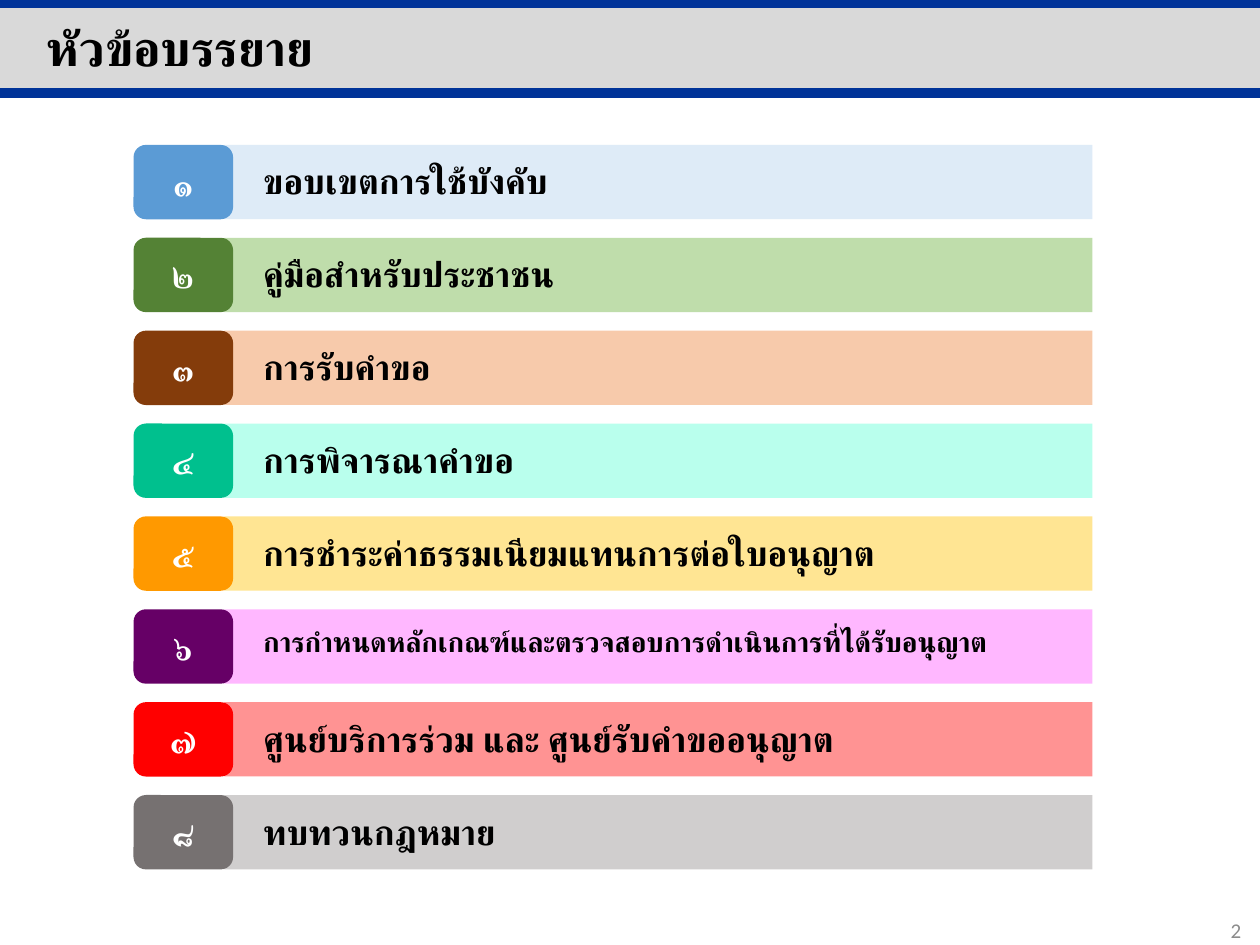
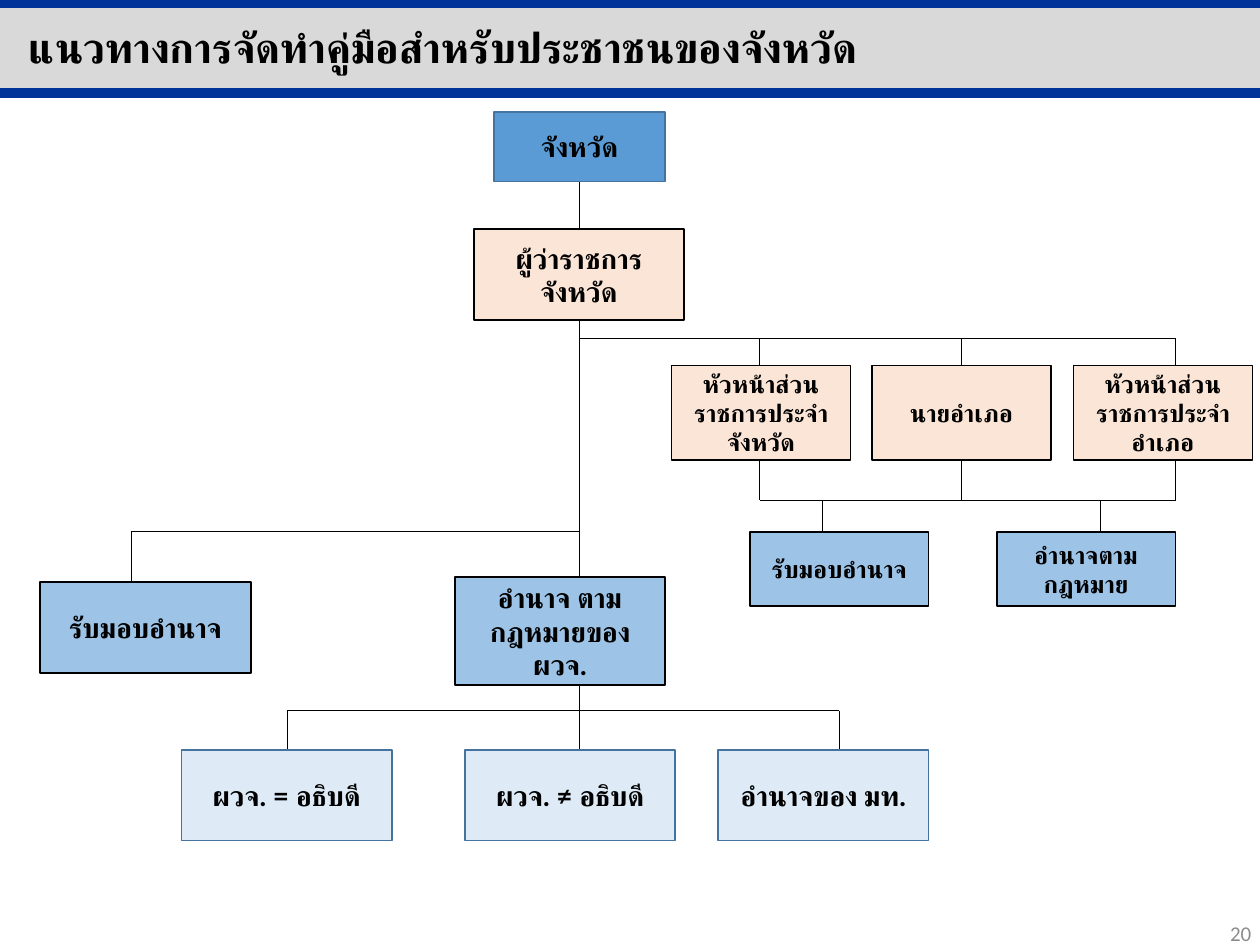
from lxml import etree
from pptx import Presentation
from pptx.dml.color import RGBColor
from pptx.enum.lang import MSO_LANGUAGE_ID as LANG
from pptx.enum.shapes import MSO_CONNECTOR as CONNECTOR, MSO_SHAPE as SHAPE
from pptx.enum.text import MSO_ANCHOR as ANCHOR, MSO_AUTO_SIZE as AUTO_SIZE, PP_ALIGN as ALIGN
from pptx.oxml.ns import qn
from pptx.util import Inches, Pt

COLORS = {
    "band": "D9D9D9", "rule": "003399", "text": "000000", "white": "FFFFFF",
    "page": "8C8C8C", "edge": "43739E",
    "province": "5B9BD5", "officer": "FBE5D6", "power": "9DC3E6", "case": "DEEBF7",
}
THAI_FONT, PAGE_FONT = "Lato", "Calibri"

# number, topic, text size, badge colour, bar colour
TOPICS = [
    ("๑", "ขอบเขตการใช้บังคับ", 20, "5B9BD5", "DEEBF7"),
    ("๒", "คู่มือสำหรับประชาชน", 20, "548235", "BFDDAB"),
    ("๓", "การรับคำขอ", 20, "843C0B", "F7CAAB"),
    ("๔", "การพิจารณาคำขอ", 20, "00C08E", "B9FFED"),
    ("๕", "การชำระค่าธรรมเนียมแทนการต่อใบอนุญาต", 20, "FF9900", "FFE593"),
    ("๖", "การกำหนดหลักเกณฑ์และตรวจสอบการดำเนินการที่ได้รับอนุญาต", 16, "660066", "FFB7FF"),
    ("๗", "ศูนย์บริการร่วม และ ศูนย์รับคำขออนุญาต", 20, "FF0000", "FF9393"),
    ("๘", "ทบทวนกฎหมาย", 20, "767171", "D0CECE"),
]
FIRST_TOP, LAST_TOP, BAR_HEIGHT = 1.15, 6.31, 0.59

# Each tier: colour, edge, text size, top, width, height, [(left, label), ...]
TIERS = [
    ("province", "edge", 16, 0.89, 1.36, 0.55, [(3.92, "จังหวัด")]),
    ("officer", "text", 16, 1.82, 1.67, 0.72, [(3.76, "ผู้ว่าราชการจังหวัด")]),
    ("officer", "text", 14, 2.9, 1.42, 0.75, [
        (5.33, "หัวหน้าส่วนราชการประจำจังหวัด"),
        (6.92, "นายอำเภอ"),
        (8.52, "หัวหน้าส่วนราชการประจำอำเภอ")]),
    ("power", "text", 14, 4.22, 1.42, 0.59, [
        (5.95, "รับมอบอำนาจ"), (7.91, "อำนาจตามกฎหมาย")]),
    ("power", "text", 16, 4.62, 1.67, 0.72, [(0.32, "รับมอบอำนาจ")]),
    ("power", "text", 16, 4.58, 1.67, 0.86, [(3.61, "อำนาจ ตามกฎหมายของ ผวจ.")]),
    ("case", "edge", 16, 5.95, 1.67, 0.72, [
        (1.44, "ผวจ. = อธิบดี"), (3.69, "ผวจ. ≠ อธิบดี"), (5.7, "อำนาจของ มท.")]),
]
TRUNK = 4.6
# Each branch: level, left end, right end, [(x, top, bottom) of its uprights]
BRANCHES = [
    (2.69, TRUNK, 9.33, [(x, 2.69, 3.97) for x in (6.03, 7.63, 9.33)]),
    (3.97, 6.03, 9.33, [(x, 3.97, 4.52) for x in (6.53, 8.73)]),
    (4.22, 1.04, TRUNK, [(1.04, 4.22, 4.62)]),
    (5.64, 2.28, 6.66, [(x, 5.64, 6.07) for x in (2.28, 6.66)]),
]


def rgb(color):
    return RGBColor.from_string(COLORS.get(color, color))


def write(frame, text, size, color="text", font=THAI_FONT, bold=True,
          align=ALIGN.LEFT, anchor=ANCHOR.MIDDLE):
    frame.word_wrap = True
    frame.auto_size = AUTO_SIZE.NONE
    frame.vertical_anchor = anchor
    paragraph = frame.paragraphs[0]
    paragraph.alignment = align
    run = paragraph.add_run()
    run.text = text
    run.font.name, run.font.size, run.font.bold = font, Pt(size), bold
    run.font.color.rgb = rgb(color)
    run.font.language_id = LANG.THAI
    # Thai glyphs take the complex-script typeface
    latin = run.font._element.find(qn("a:latin"))
    complex_script = etree.Element(qn("a:cs"), typeface=font)
    latin.addnext(complex_script)


def add_block(slide, left, top, width, height, fill, edge=None, kind=SHAPE.RECTANGLE):
    block = slide.shapes.add_shape(kind, *map(Inches, (left, top, width, height)))
    block.shadow.inherit = False
    block.fill.solid()
    block.fill.fore_color.rgb = rgb(fill)
    if edge:
        block.line.color.rgb = rgb(edge)
        block.line.width = Pt(1)
    else:
        block.line.fill.background()
    return block


def add_label(slide, left, top, width, height, text, size, **style):
    label = slide.shapes.add_textbox(*map(Inches, (left, top, width, height)))
    write(label.text_frame, text, size, **style)


def add_line(slide, x1, y1, x2, y2, color="text", width=0.5):
    line = slide.shapes.add_connector(CONNECTOR.STRAIGHT, *map(Inches, (x1, y1, x2, y2)))
    line.line.color.rgb = rgb(color)
    line.line.width = Pt(width)
    etree.SubElement(line._element.spPr, qn("a:effectLst"))
    return line


def put_header_on_layout(slide):
    """Draw the title band and its rules, then move them to the slide's layout."""
    parts = [add_block(slide, 0, 0.05, 10, 0.68, "band")]
    parts += [add_line(slide, 0, y, 10, y, "rule", 6) for y in (0.74, 0.02)]
    layout_tree = slide.slide_layout.shapes.element
    for position, part in enumerate(parts, start=2):
        layout_tree.insert(position, part.element)


def add_titled_slide(prs, title, size, place, page, page_place):
    slide = prs.slides.add_slide(prs.slide_layouts[5])
    heading = slide.shapes.title
    heading.left, heading.top, heading.width, heading.height = map(Inches, place)
    write(heading.text_frame, title, size)
    add_label(slide, *page_place, 2.25, 0.4, page, 12, color="page",
              font=PAGE_FONT, bold=False, align=ALIGN.RIGHT)
    return slide


def add_topic(slide, top, number, topic, size, badge_color, bar_color):
    add_block(slide, 1.78, top, 6.89, BAR_HEIGHT, bar_color)
    add_label(slide, 1.99, top + 0.07, 6.68, 0.44, topic, size, anchor=ANCHOR.TOP)
    badge = add_block(slide, 1.06, top, 0.79, BAR_HEIGHT, badge_color,
                      kind=SHAPE.ROUNDED_RECTANGLE)
    write(badge.text_frame, number, 20, "white", align=ALIGN.CENTER)


def add_topics(slide):
    pitch = (LAST_TOP - FIRST_TOP) / (len(TOPICS) - 1)
    for row, topic in enumerate(TOPICS):
        add_topic(slide, FIRST_TOP + row * pitch, *topic)


def add_province_tree(slide):
    add_line(slide, TRUNK, 1.16, TRUNK, 6.07)
    for level, left, right, uprights in BRANCHES:
        add_line(slide, left, level, right, level)
        for x, top, bottom in uprights:
            add_line(slide, x, top, x, bottom)
    for fill, edge, size, top, width, height, units in TIERS:
        for left, unit in units:
            box = add_block(slide, left, top, width, height, fill, edge)
            write(box.text_frame, unit, size, align=ALIGN.CENTER)


def main():
    prs = Presentation()
    prs.slide_width, prs.slide_height = Inches(10), Inches(7.5)

    agenda = add_titled_slide(prs, "หัวข้อบรรยาย", 28, (0.27, 0.09, 8.95, 0.57),
                              "2", (7.7, 7.18))
    put_header_on_layout(agenda)
    add_topics(agenda)

    province = add_titled_slide(prs, "แนวทางการจัดทำคู่มือสำหรับประชาชนของจังหวัด", 24,
                                (0.13, 0.12, 7.77, 0.5), "20", (7.78, 7.21))
    add_province_tree(province)

    prs.save("out.pptx")


if __name__ == "__main__":
    main()
